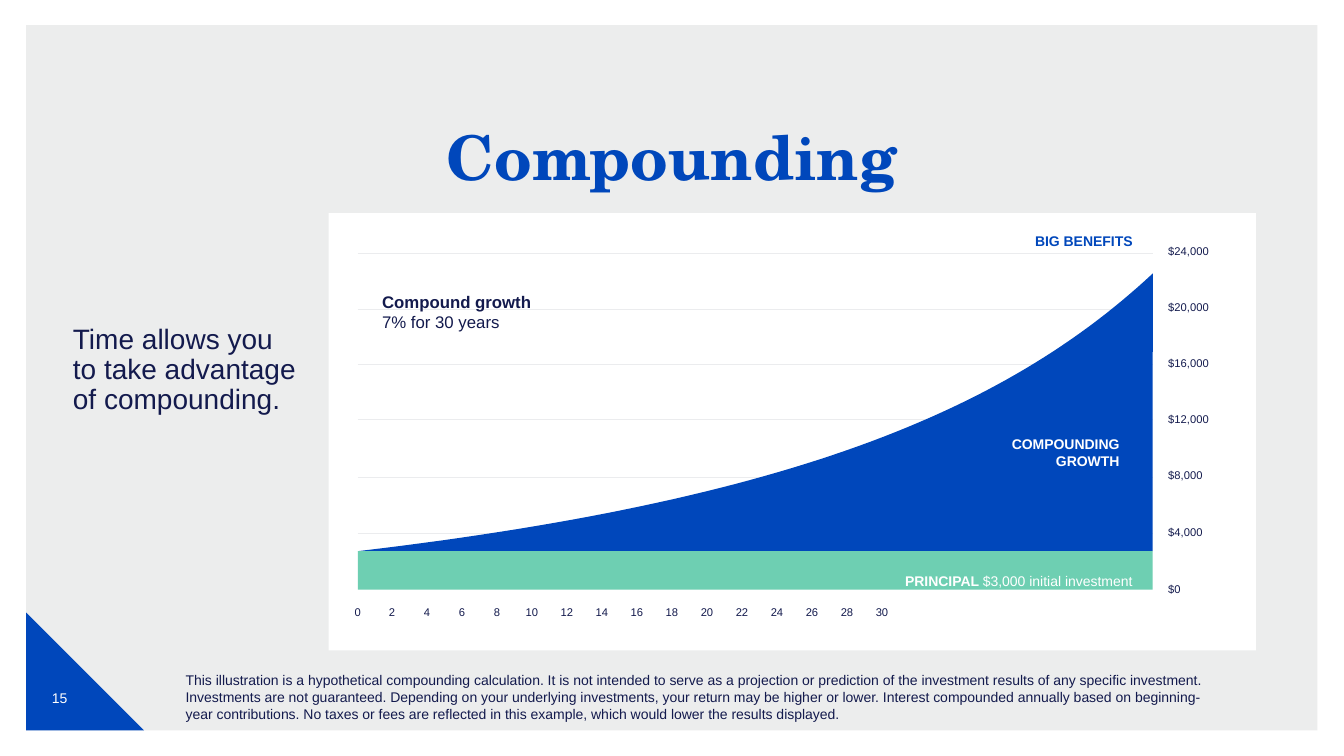
"""Build the slide on compounding."""
from dataclasses import dataclass

from lxml.etree import SubElement
from pptx import Presentation
from pptx.dml.color import RGBColor as Rgb
from pptx.enum.shapes import MSO_CONNECTOR as Connector, MSO_SHAPE as Preset
from pptx.enum.text import MSO_ANCHOR as Anchor, MSO_AUTO_SIZE as AutoSize, PP_ALIGN as Align
from pptx.oxml.ns import qn
from pptx.util import Pt


@dataclass(frozen=True)
class Theme:
    """Hold the colours, fonts and type sizes."""
    blue: str = "0047BB"
    navy: str = "131A4D"
    green: str = "6ECFB2"
    grey: str = "D0D3D4"
    grid: str = "EBECEE"
    white: str = "FFFFFF"
    sans: str = "Arial"
    serif: str = "TeX Gyre Schola"
    title: int = 44
    lead: int = 20
    heading: int = 12
    small: int = 10
    axis: int = 8


THEME = Theme()
LABEL_INSETS = (0, 3.6, 7.2, 3.6)
FLUSH_INSETS = (0, 3.6, 0, 3.6)
TEXT_INSETS = (7.2, 3.6, 7.2, 3.6)
PRINCIPAL_INSETS = (0, 0, 7.2, 0)
PLOT_LEFT, PLOT_RIGHT, BASE, PRINCIPAL_TOP = 255.6, 823.3, 421.2, 393.7
GRID_ROWS = (180.7, 221, 260.6, 299.5, 341.3, 380.9)
LABEL_TOPS = (163, 203.2, 243.3, 283.2, 323.4, 363.8, 404.8)
YEAR_OFFSET, YEAR_STEP = 1.6, 25
CURVE = ((255.6, 393.7), (560.2, 357.8), (716.4, 295.2), (823.5, 195.3))
DISCLAIMER = (
    "This illustration is a hypothetical compounding calculation. It is not intended to serve "
    "as a projection or prediction of the investment results of any specific investment. "
    "Investments are not guaranteed. Depending on your underlying investments, your return may "
    "be higher or lower. Interest compounded annually based on beginning-year contributions. "
    "No taxes or fees are reflected in this example, which would lower the results displayed."
)


def apply(target, values):
    """Set each attribute named in a dict of format values."""
    for name, value in values.items():
        setattr(target, name, value)


def paint(shape, color, alpha=None):
    """Give a shape a plain fill, with no line or shadow."""
    shape.shadow.inherit = False
    shape.line.fill.background()
    shape.fill.solid()
    shape.fill.fore_color.rgb = Rgb.from_string(color)
    if alpha is not None:
        tint = shape.element.spPr.find(".//" + qn("a:srgbClr"))
        SubElement(tint, qn("a:alpha")).set("val", str(alpha * 1000))


def add_block(shapes, preset, box, color, alpha=None):
    """Add a filled preset shape."""
    paint(shapes.add_shape(preset, *map(Pt, box)), color, alpha)


def write(shape, spans, size, color=THEME.navy, font=THEME.sans, insets=LABEL_INSETS,
          anchor=Anchor.MIDDLE, **layout):
    """Write one paragraph of (text, bold) spans into a shape and return it."""
    frame = shape.text_frame
    left, top, right, bottom = map(Pt, insets)
    apply(frame, dict(word_wrap=True, auto_size=AutoSize.NONE, vertical_anchor=anchor,
                      margin_left=left, margin_top=top,
                      margin_right=right, margin_bottom=bottom))
    para = frame.paragraphs[0]
    apply(para, layout)
    for text, bold in spans:
        for row, line in enumerate(text.split("\n")):
            if row:
                para.add_line_break()
            if line:
                span = para.add_run()
                span.text = line
                apply(span.font, dict(name=font, size=Pt(size), bold=bold))
                span.font.color.rgb = Rgb.from_string(color)
    return para


def add_text(shapes, box, spans, size, **style):
    """Add a text box and return its paragraph."""
    return write(shapes.add_textbox(*map(Pt, box)), spans, size, **style)


def add_label(shapes, box, spans, size, **style):
    """Add a chart label with its paragraph spacing."""
    return add_text(shapes, box, spans, size, space_before=Pt(10), **style)


def add_gridline(shapes, y):
    """Add a thin horizontal line across the plot."""
    line = shapes.add_connector(Connector.STRAIGHT, Pt(PLOT_LEFT), Pt(y), Pt(PLOT_RIGHT), Pt(y))
    line.line.width = Pt(0.5)
    line.line.color.rgb = Rgb.from_string(THEME.grid)
    SubElement(line.element.spPr, qn("a:effectLst"))


def curve_point(t):
    """Return the point of the growth curve at t."""
    weights = ((1 - t) ** 3, 3 * t * (1 - t) ** 2, 3 * t ** 2 * (1 - t), t ** 3)
    return tuple(Pt(sum(w * p[axis] for w, p in zip(weights, CURVE))) for axis in (0, 1))


def add_growth_area(shapes, steps=60):
    """Add the area between the principal and the growth curve."""
    points = [curve_point(step / steps) for step in range(steps + 1)]
    builder = shapes.build_freeform(*points[0])
    builder.add_line_segments(points[1:] + [(Pt(PLOT_RIGHT), Pt(PRINCIPAL_TOP))], close=True)
    paint(builder.convert_to_shape(), THEME.blue)


def add_year_axis(shapes):
    """Add the years on evenly spaced centred tab stops."""
    years = [str(year) for year in range(0, 31, 2)]
    para = add_label(shapes, (253.4, 425.5, 586, 23), [("\t".join(years), False)], THEME.axis)
    stops = SubElement(para._p.get_or_add_pPr(), qn("a:tabLst"))
    for index in range(1, len(years)):
        stop = SubElement(stops, qn("a:tab"))
        stop.set("pos", str(Pt(YEAR_OFFSET + index * YEAR_STEP)))
        stop.set("algn", "ctr")


def add_growth_chart(shapes):
    """Add the compounding chart on its white panel."""
    add_block(shapes, Preset.RECTANGLE, (234.7, 152.2, 662.4, 312.5), THEME.white)
    for top, amount in zip(LABEL_TOPS, range(24000, -1, -4000)):
        add_label(shapes, (834.5, top, 62.6, 32.4), [(f"${amount:,}", False)], THEME.axis)
    add_year_axis(shapes)
    for y in GRID_ROWS:
        add_gridline(shapes, y)
    add_growth_area(shapes)
    add_block(shapes, Preset.RECTANGLE,
              (PLOT_LEFT, PRINCIPAL_TOP, PLOT_RIGHT - PLOT_LEFT, BASE - PRINCIPAL_TOP), THEME.green)
    for box, spans, color, insets in (
        ((684.7, 291.6, 122, 63.4), [("COMPOUNDING GROWTH", True)], THEME.white, LABEL_INSETS),
        ((471.6, 409.4, 344.4, 11.8),
         [("PRINCIPAL ", True), ("$3,000 initial investment", False)],
         THEME.white, PRINCIPAL_INSETS),
        ((702.7, 140.4, 113.4, 63.4), [("BIG BENEFITS", True)], THEME.blue, LABEL_INSETS),
    ):
        add_label(shapes, box, spans, THEME.small, color=color, insets=insets,
                  alignment=Align.RIGHT)
    add_label(shapes, (272.9, 175.7, 174.2, 94.3),
              [("Compound growth\n", True), ("7% for 30 years", False)], THEME.heading)


def add_title(page):
    """Format the title placeholder and bring it to the front."""
    title = page.shapes.title
    apply(title, dict(left=Pt(157.7), top=Pt(87.1), width=Pt(644.4), height=Pt(92.2)))
    write(title, [("Compounding", True)], THEME.title, color=THEME.blue, font=THEME.serif,
          insets=FLUSH_INSETS, anchor=Anchor.TOP, alignment=Align.CENTER, line_spacing=0.9)
    title.element.getparent().append(title.element)


def main():
    """Build and save the deck."""
    deck = Presentation()
    apply(deck, dict(slide_width=Pt(960), slide_height=Pt(540)))
    page = deck.slides.add_slide(deck.slide_layouts[5])
    shapes = page.shapes
    add_block(shapes, Preset.RECTANGLE, (18.7, 18, 922.3, 503.8), THEME.grey, alpha=40)
    add_block(shapes, Preset.RIGHT_TRIANGLE, (18.7, 437.6, 84.2, 84.2), THEME.blue)
    add_text(shapes, (22.8, 477.4, 39.6, 41.8), [("15", False)], THEME.small,
             color=THEME.white, alignment=Align.CENTER, insets=TEXT_INSETS)
    add_growth_chart(shapes)
    add_text(shapes, (52.1, 163.4, 190.1, 202.3),
             [("Time allows you\nto take advantage\nof compounding.", False)], THEME.lead,
             insets=FLUSH_INSETS, line_spacing=0.9, space_before=Pt(10))
    add_title(page)
    add_text(shapes, (125.5, 476.2, 756.7, 43.9), [(DISCLAIMER, False)], THEME.small,
             insets=TEXT_INSETS, anchor=Anchor.TOP)
    deck.save("out.pptx")


if __name__ == "__main__":
    main()
